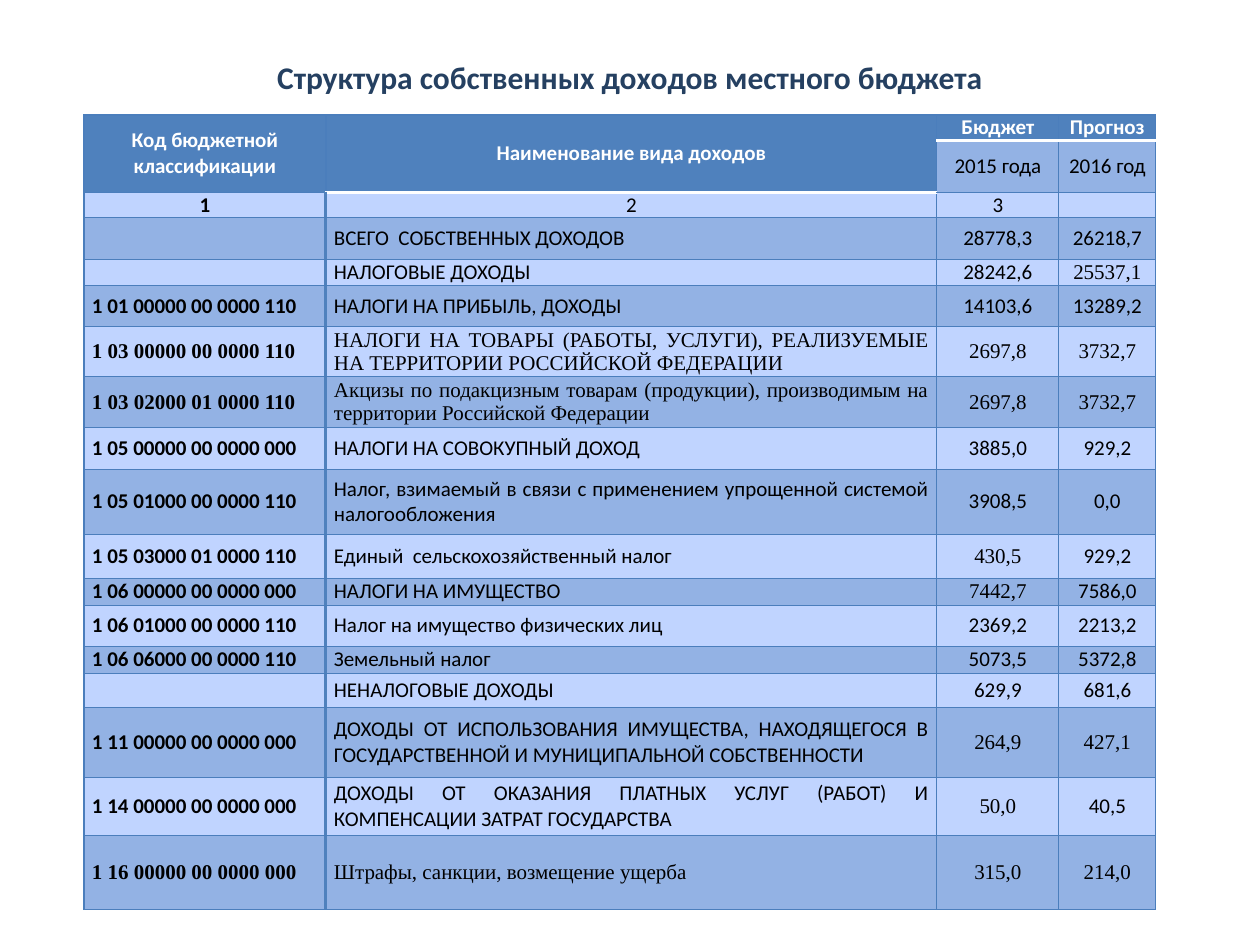
from lxml import etree
from pptx import Presentation
from pptx import util as u
from pptx.dml import color
from pptx.enum import text
from pptx.oxml import ns

PX = u.Inches(1) / 126
COLORS = {
    "title": "254061", "header": "4F81BD", "band": "93B2E4", "plain": "C0D4FF",
    "grid": "4B7EBC", "white": "FFFFFF", "black": "000000",
}
CALIBRI, TIMES = "Calibri", "Times New Roman"
CENTER, JUSTIFY = text.PP_ALIGN.CENTER, text.PP_ALIGN.JUSTIFY
MIDDLE, BOTTOM = text.MSO_ANCHOR.MIDDLE, text.MSO_ANCHOR.BOTTOM

COLUMN_WIDTHS = [242, 611, 122, 97]
ROW_HEIGHTS = [25, 52, 25, 42, 26, 41, 47, 46, 42, 65, 44, 27, 41, 27, 34, 70, 58, 74]
ROWS = [
    ("Код бюджетной классификации", "Наименование вида доходов", "Бюджет", "Прогноз"),
    ("", "", "2015 года", "2016 год"),
    ("1", "2", "3", ""),
    ("", "ВСЕГО  СОБСТВЕННЫХ ДОХОДОВ", "28778,3", "26218,7"),
    ("", "НАЛОГОВЫЕ ДОХОДЫ", "28242,6", "25537,1"),
    ("1 01 00000 00 0000 110", "НАЛОГИ НА ПРИБЫЛЬ, ДОХОДЫ", "14103,6", "13289,2"),
    ("1 03 00000 00 0000 110",
     "НАЛОГИ НА ТОВАРЫ (РАБОТЫ, УСЛУГИ), РЕАЛИЗУЕМЫЕ НА ТЕРРИТОРИИ РОССИЙСКОЙ ФЕДЕРАЦИИ",
     "2697,8", "3732,7"),
    ("1 03 02000 01 0000 110",
     "Акцизы по подакцизным товарам (продукции), производимым на территории Российской Федерации",
     "2697,8", "3732,7"),
    ("1 05 00000 00 0000 000", "НАЛОГИ НА СОВОКУПНЫЙ ДОХОД", "3885,0", "929,2"),
    ("1 05 01000 00 0000 110",
     "Налог, взимаемый в связи с применением упрощенной системой налогообложения",
     "3908,5", "0,0"),
    ("1 05 03000 01 0000 110", "Единый  сельскохозяйственный налог", "430,5", "929,2"),
    ("1 06 00000 00 0000 000", "НАЛОГИ НА ИМУЩЕСТВО", "7442,7", "7586,0"),
    ("1 06 01000 00 0000 110", "Налог на имущество физических лиц", "2369,2", "2213,2"),
    ("1 06 06000 00 0000 110", "Земельный налог", "5073,5", "5372,8"),
    ("", "НЕНАЛОГОВЫЕ ДОХОДЫ", "629,9", "681,6"),
    ("1 11 00000 00 0000 000",
     "ДОХОДЫ ОТ ИСПОЛЬЗОВАНИЯ ИМУЩЕСТВА, НАХОДЯЩЕГОСЯ В ГОСУДАРСТВЕННОЙ И МУНИЦИПАЛЬНОЙ СОБСТВЕННОСТИ",
     "264,9", "427,1"),
    ("1 14 00000 00 0000 000",
     "ДОХОДЫ ОТ ОКАЗАНИЯ ПЛАТНЫХ УСЛУГ (РАБОТ) И КОМПЕНСАЦИИ ЗАТРАТ ГОСУДАРСТВА",
     "50,0", "40,5"),
    ("1 16 00000 00 0000 000", "Штрафы, санкции, возмещение ущерба", "315,0", "214,0"),
]
# Columns set in Times New Roman, by row
TIMES_COLUMNS = {4: {3}, 6: {0, 1, 2, 3}, 7: {0, 1, 2, 3}, 10: {2}, 11: {2},
                 15: {2, 3}, 16: {2}, 17: {0, 1, 2, 3}}


def px(length):
    return u.Emu(round(length * PX))


def rgb(name):
    return color.RGBColor.from_string(COLORS[name])


def style_paragraph(para, size, color_name, font=CALIBRI, bold=False, align=CENTER):
    para.alignment = align
    para.font.name = font
    para.font.size = u.Pt(size)
    para.font.bold = bold
    para.font.color.rgb = rgb(color_name)


def add_title(page, words):
    box = page.shapes.add_textbox(px(63), px(38), px(1134), px(77))
    frame = box.text_frame
    frame.word_wrap = True
    frame.vertical_anchor = MIDDLE
    frame.text = words
    style_paragraph(frame.paragraphs[0], 18, "title", bold=True)


def horizontal_edge(edge, col):
    """Colour and width of the rule above row number edge."""
    if (edge == 1 and col >= 2) or (edge == 2 and col == 1):
        return "white", 2
    return "grid", 0.75


def vertical_edge(row, edge):
    """Colour and width of the rule to the left of column number edge."""
    if edge == 1 and row >= 2:
        return "header", 2
    return "grid", 0.75


def set_borders(cell, row, col):
    last_row = row + cell.span_height - 1 if cell.is_merge_origin else row
    edges = {
        "lnL": vertical_edge(row, col),
        "lnR": vertical_edge(row, col + 1),
        "lnT": horizontal_edge(row, col),
        "lnB": horizontal_edge(last_row + 1, col),
    }
    properties = cell._tc.get_or_add_tcPr()
    for position, (tag, (color_name, width)) in enumerate(edges.items()):
        line = etree.Element(ns.qn(f"a:{tag}"), w=str(u.Pt(width)))
        fill = etree.SubElement(line, ns.qn("a:solidFill"))
        etree.SubElement(fill, ns.qn("a:srgbClr"), val=COLORS[color_name])
        properties.insert(position, line)


def fill_cell(cell, row, col, words):
    is_header = row == 0 or (row == 1 and col < 2)
    fill_name = "header" if is_header else "band" if row % 2 else "plain"
    cell.fill.solid()
    cell.fill.fore_color.rgb = rgb(fill_name)
    cell.margin_left = cell.margin_right = px(8)
    cell.margin_top = cell.margin_bottom = 0
    cell.vertical_anchor = BOTTOM if row == 2 or (row, col) == (0, 3) else MIDDLE
    cell.text = words
    style_paragraph(
        cell.text_frame.paragraphs[0], 12,
        "white" if is_header else "black",
        font=TIMES if col in TIMES_COLUMNS.get(row, ()) else CALIBRI,
        bold=is_header or col == 0,
        align=JUSTIFY if row > 2 and col < 2 else CENTER,
    )
    set_borders(cell, row, col)


def add_income_table(page):
    frame = page.shapes.add_table(
        len(ROWS), len(COLUMN_WIDTHS), px(84), px(115),
        px(sum(COLUMN_WIDTHS)), px(sum(ROW_HEIGHTS)))
    table = frame.table
    for column, width in zip(table.columns, COLUMN_WIDTHS):
        column.width = px(width)
    for line, height in zip(table.rows, ROW_HEIGHTS):
        line.height = px(height)
    for col in range(2):
        table.cell(0, col).merge(table.cell(1, col))
    for row, entries in enumerate(ROWS):
        for col, words in enumerate(entries):
            fill_cell(table.cell(row, col), row, col, words)


def main():
    deck = Presentation()
    deck.slide_width, deck.slide_height = px(1260), px(945)
    page = deck.slides.add_slide(deck.slide_layouts[6])
    add_title(page, "Структура собственных доходов местного бюджета")
    add_income_table(page)
    deck.save("out.pptx")


if __name__ == "__main__":
    main()
